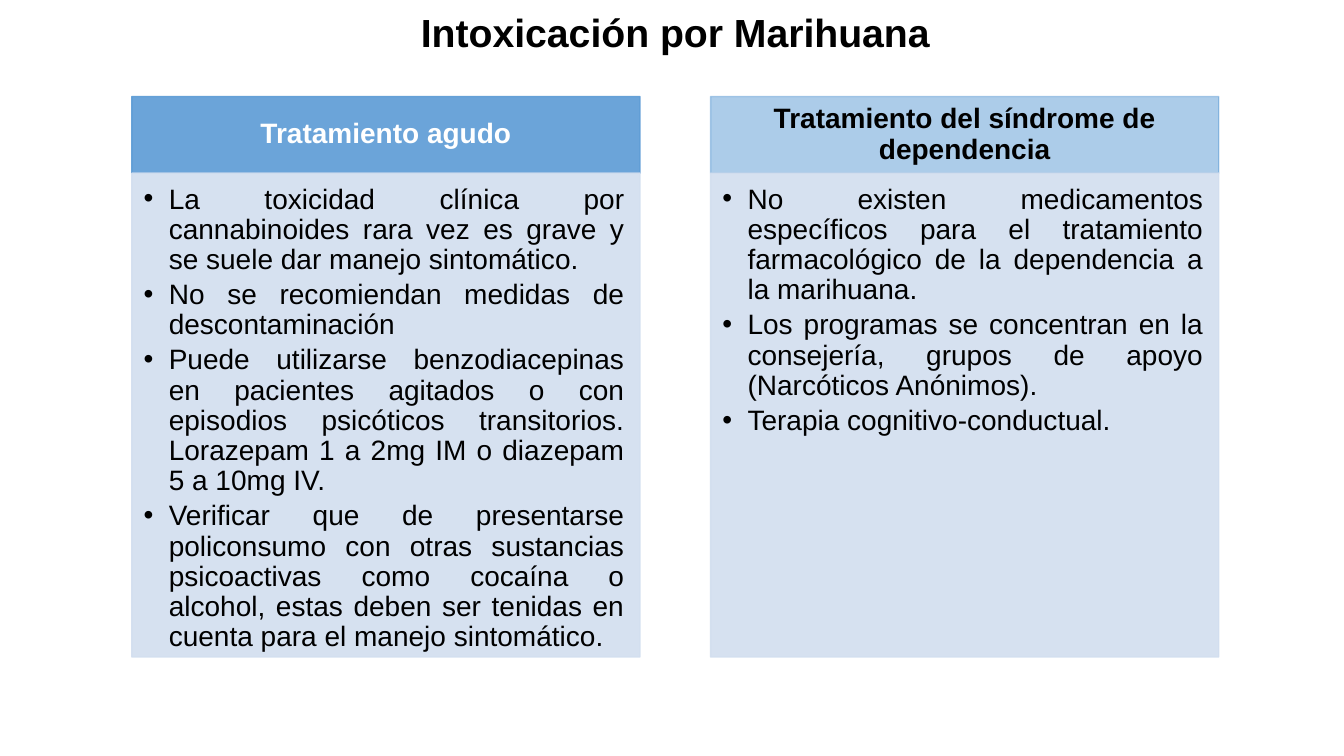
from dataclasses import dataclass

from lxml.etree import SubElement
from pptx import Presentation
from pptx.dml.color import RGBColor as Color
from pptx.enum.shapes import MSO_SHAPE as Shape
from pptx.enum.text import MSO_ANCHOR as Anchor, PP_ALIGN as Align
from pptx.oxml.ns import qn
from pptx.util import Pt


@dataclass
class Theme:
    font: str = "Arial"
    title_size: int = 28
    body_size: int = 20
    black: str = "000000"
    white: str = "FFFFFF"
    header: str = "5B9BD5"
    panel: str = "D2DEEF"


theme = Theme()


def write(box, lines, size=theme.body_size, color=theme.black, bold=False,
          align=Align.CENTER, anchor=Anchor.MIDDLE, insets=(7.2, 3.6, 7.2, 3.6),
          after=0, bullet=False):
    frame = box.text_frame
    frame.word_wrap = True
    frame.vertical_anchor = anchor
    (frame.margin_left, frame.margin_top,
     frame.margin_right, frame.margin_bottom) = map(Pt, insets)
    for index, line in enumerate(lines):
        para = frame.add_paragraph() if index else frame.paragraphs[0]
        para.alignment = align
        para.line_spacing = 0.9
        para.space_before = Pt(0)
        para.space_after = Pt(after)
        if bullet:
            props = para._p.get_or_add_pPr()
            props.set("marL", str(Pt(18)))
            props.set("indent", str(Pt(-18)))
            SubElement(props, qn("a:buFont")).set("typeface", theme.font)
            SubElement(props, qn("a:buChar")).set("char", "•")
        span = para.add_run()
        span.text = line
        span.font.name = theme.font
        span.font.size = Pt(size)
        span.font.bold = bold
        span.font.color.rgb = Color.from_string(color)


def add_block(left, top, width, height, color, opacity):
    block = page.shapes.add_shape(Shape.RECTANGLE, Pt(left), Pt(top), Pt(width), Pt(height))
    block.shadow.inherit = False
    block.fill.solid()
    block.line.fill.solid()
    block.line.width = Pt(1)
    for paint in (block.fill, block.line.fill):
        paint.fore_color.rgb = Color.from_string(color)
    for tint in block._element.spPr.iter(qn("a:srgbClr")):
        SubElement(tint, qn("a:alpha")).set("val", str(opacity * 1000))
    return block


deck = Presentation()
deck.slide_width = Pt(960)
deck.slide_height = Pt(540)
page = deck.slides.add_slide(deck.slide_layouts[6])

columns = [
    ("Tratamiento agudo", theme.white, 90, [
        "La toxicidad clínica por cannabinoides rara vez es grave y se suele dar manejo sintomático.",
        "No se recomiendan medidas de descontaminación",
        "Puede utilizarse benzodiacepinas en pacientes agitados o con episodios psicóticos "
        "transitorios. Lorazepam 1 a 2mg IM o diazepam 5 a 10mg IV.",
        "Verificar que de presentarse policonsumo con otras sustancias psicoactivas como cocaína "
        "o alcohol, estas deben ser tenidas en cuenta para el manejo sintomático.",
    ]),
    ("Tratamiento del síndrome de dependencia", theme.black, 50, [
        "No existen medicamentos específicos para el tratamiento farmacológico de la "
        "dependencia a la marihuana.",
        "Los programas se concentran en la consejería, grupos de apoyo (Narcóticos Anónimos).",
        "Terapia cognitivo-conductual.",
    ]),
]

column_left, column_step, column_width = 94.2, 413.4, 363
header_top, header_height, panel_height = 69, 54.7, 345.6

for index, (heading, heading_color, opacity, points) in enumerate(columns):
    left = column_left + index * column_step
    header = add_block(left, header_top, column_width, header_height, theme.header, opacity)
    write(header, [heading], color=heading_color, bold=True, insets=(11.2, 6.4, 11.2, 6.4))
    panel = add_block(left, header_top + header_height, column_width, panel_height,
                      theme.panel, 90)
    write(panel, points, align=Align.JUSTIFY, anchor=Anchor.TOP,
          insets=(8.4, 8.4, 11.2, 12.6), after=3.4, bullet=True)

title = page.shapes.add_textbox(Pt(68.4), Pt(-0.7), Pt(828), Pt(51))
write(title, ["Intoxicación por Marihuana"], size=theme.title_size, bold=True)

deck.save("out.pptx")
